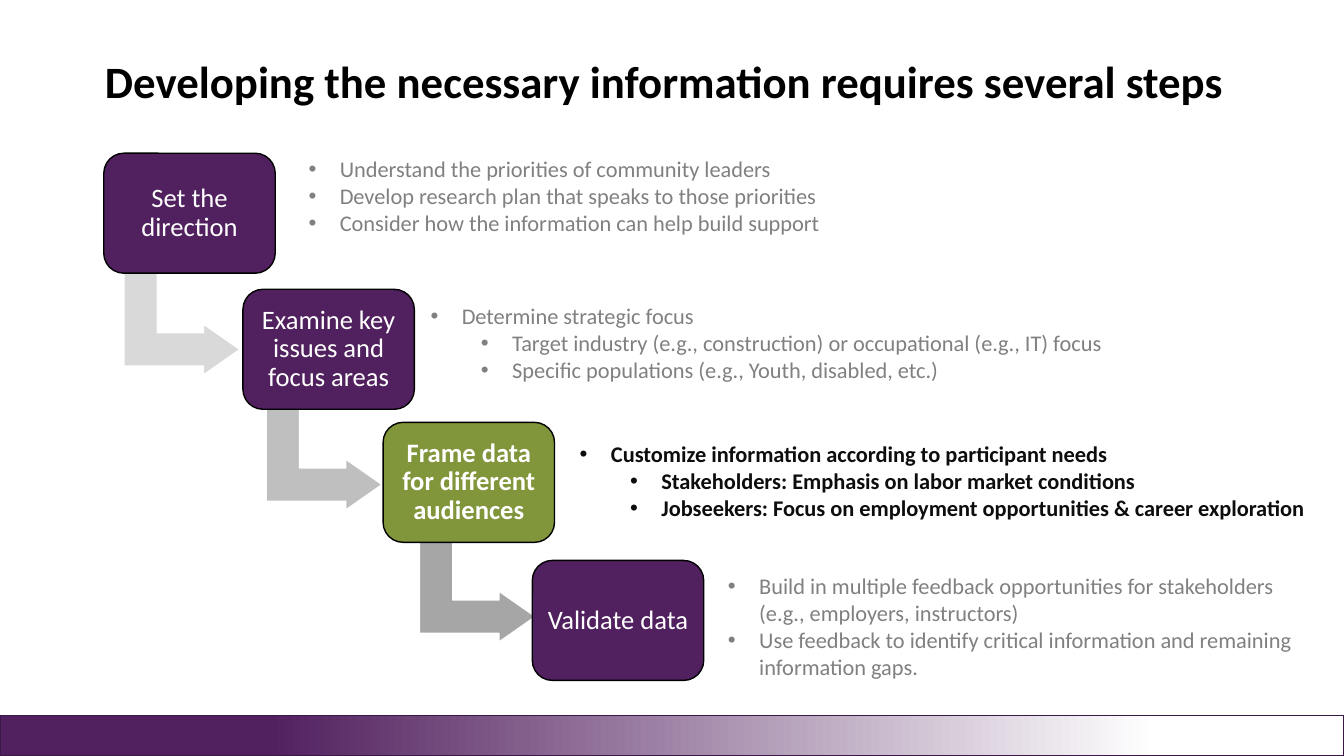
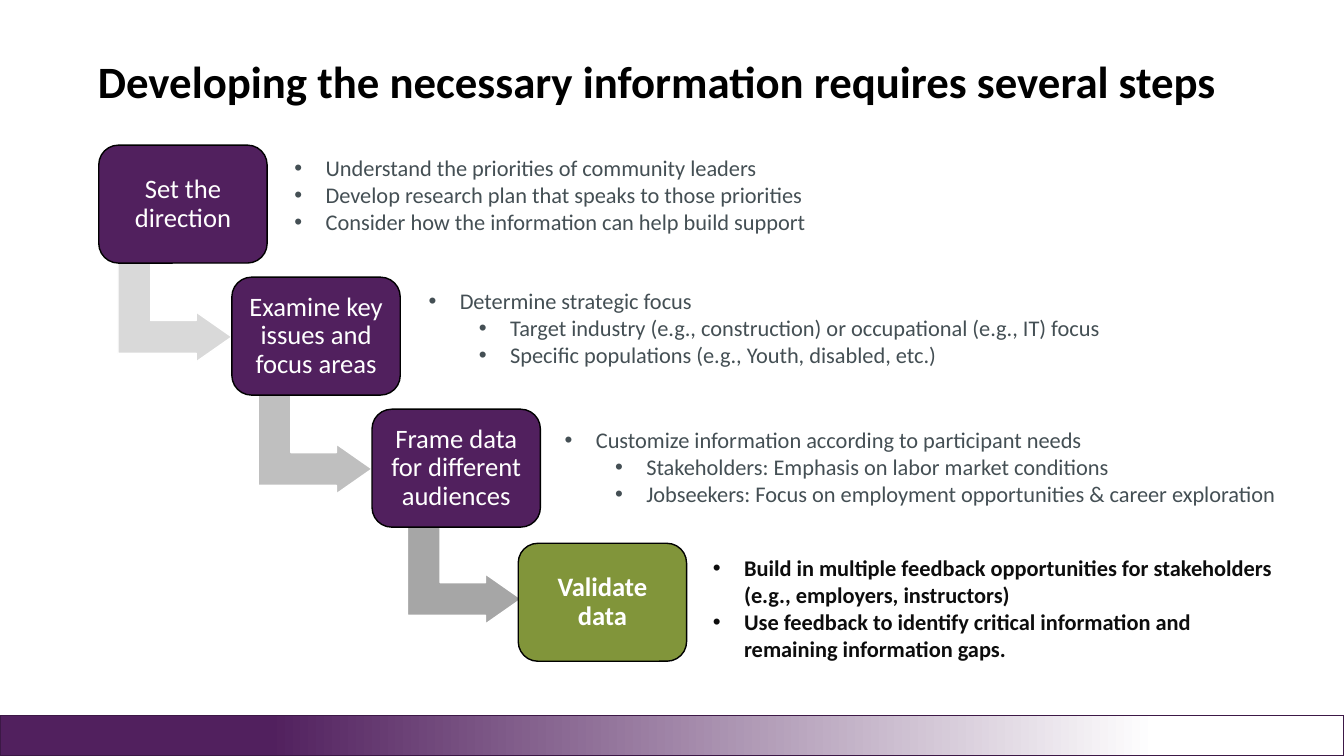
"""Build two slides that walk through the steps of developing information."""

import dataclasses

import lxml.etree
import pptx
import pptx.dml.color
import pptx.enum.shapes
import pptx.enum.text
import pptx.oxml.ns
import pptx.util

Inches = pptx.util.Inches
Pt = pptx.util.Pt
MSO_SHAPE = pptx.enum.shapes.MSO_SHAPE
PP_ALIGN = pptx.enum.text.PP_ALIGN
MSO_ANCHOR = pptx.enum.text.MSO_ANCHOR
MSO_AUTO_SIZE = pptx.enum.text.MSO_AUTO_SIZE
qn = pptx.oxml.ns.qn


@dataclasses.dataclass(frozen=True)
class Theme:
    font: str = "Calibri"
    black: str = "000000"
    white: str = "FFFFFF"
    purple: str = "51205E"
    green: str = "81953A"
    band_edge: str = "3C1846"
    active_text: str = "0D0D0D"
    arrows: tuple = ("D9D9D9", "BFBFBF", "A6A6A6")
    title_size: int = 32
    step_size: int = 19
    list_size: int = 16


HEADING = "Developing the necessary information requires several steps"

STEPS = [
    ("Set the direction", [
        (0, "Understand the priorities of community leaders"),
        (0, "Develop research plan that speaks to those priorities"),
        (0, "Consider how the information can help build support"),
    ]),
    ("Examine key issues and focus areas", [
        (0, "Determine strategic focus"),
        (1, "Target industry (e.g., construction) or occupational (e.g., IT) focus"),
        (1, "Specific populations (e.g., Youth, disabled, etc.)"),
    ]),
    ("Frame data for different audiences", [
        (0, "Customize information according to participant needs"),
        (1, "Stakeholders: Emphasis on labor market conditions"),
        (1, "Jobseekers: Focus on employment opportunities & career exploration"),
    ]),
    ("Validate data", [
        (0, "Build in multiple feedback opportunities for stakeholders "
            "(e.g., employers, instructors)"),
        (0, "Use feedback to identify critical information and remaining "
            "information gaps."),
    ]),
]

STAIRCASES = [
    {
        "active": 2,
        "quiet_text": "808080",
        "title": (0.94, 0.45, 11.85, 0.76),
        "step_size": (1.7, 1.19),
        "steps": [(1.03, 1.52), (2.41, 2.87), (3.8, 4.19), (5.28, 5.56)],
        "arrow_size": (1.01, 1.15),
        "arrows": [(1.3, 2.64), (2.71, 3.98), (4.23, 5.29)],
        "lists": [(2.96, 1.49, 6.42, 0.91), (4.17, 2.95, 8.89, 0.91),
                  (5.65, 4.32, 7.47, 0.91), (7.12, 5.63, 6, 1.18)],
    },
    {
        "active": 3,
        "quiet_text": "444F54",
        "title": (0.87, 0.38, 11.77, 0.91),
        "step_size": (1.67, 1.17),
        "steps": [(0.98, 1.44), (2.3, 2.75), (3.69, 4.06), (5.14, 5.39)],
        "arrow_size": (0.99, 1.13),
        "arrows": [(1.24, 2.53), (2.63, 3.84), (4.11, 5.13)],
        "lists": [(2.82, 1.48, 6.42, 0.91), (4.15, 2.8, 8.57, 0.91),
                  (5.5, 4.18, 7.5, 0.91), (6.97, 5.45, 5.82, 1.18)],
    },
]


def rgb(code):
    return pptx.dml.color.RGBColor.from_string(code)


class StepDeck:
    def __init__(self, theme):
        self.theme = theme
        self.deck = pptx.Presentation()
        self.deck.slide_width = Inches(13.33)
        self.deck.slide_height = Inches(7.5)
        self.slide = None

    def new_slide(self):
        four_lists_layout = self.deck.slide_layouts.get_by_name("Comparison")
        self.slide = self.deck.slides.add_slide(four_lists_layout)

    def add_words(self, paragraph, words, size, color, bold=False):
        run = paragraph.add_run()
        run.text = words
        run.font.name = self.theme.font
        run.font.size = Pt(size)
        run.font.bold = bold
        run.font.color.rgb = rgb(color)

    def place(self, holder, box):
        holder.left, holder.top, holder.width, holder.height = map(Inches, box)

    def title(self, words, box):
        heading = self.slide.shapes.title
        self.place(heading, box)
        frame = heading.text_frame
        frame.auto_size = MSO_AUTO_SIZE.NONE
        frame.vertical_anchor = MSO_ANCHOR.MIDDLE
        line = frame.paragraphs[0]
        line.alignment = PP_ALIGN.LEFT
        line.line_spacing = 0.9
        self.add_words(line, words, self.theme.title_size, self.theme.black, True)

    def outline(self, kind, box, edge):
        figure = self.slide.shapes.add_shape(kind, *map(Inches, box))
        figure.shadow.inherit = False
        figure.line.color.rgb = rgb(edge)
        figure.line.width = Pt(1)
        return figure

    def arrow(self, box, color):
        bend = self.outline(MSO_SHAPE.BENT_UP_ARROW, box, self.theme.white)
        bend.rotation = 90
        for index, amount in enumerate((0.328, 0.25, 0.358)):
            bend.adjustments[index] = amount
        bend.fill.solid()
        bend.fill.fore_color.rgb = rgb(color)

    def step(self, words, box, active):
        card = self.outline(MSO_SHAPE.ROUNDED_RECTANGLE, box, self.theme.black)
        card.fill.solid()
        card.fill.fore_color.rgb = rgb(
            self.theme.green if active else self.theme.purple)
        frame = card.text_frame
        frame.word_wrap = True
        frame.vertical_anchor = MSO_ANCHOR.MIDDLE
        frame.margin_left = frame.margin_right = Inches(0.08)
        frame.margin_top = frame.margin_bottom = Inches(0.08)
        line = frame.paragraphs[0]
        line.alignment = PP_ALIGN.CENTER
        line.line_spacing = 0.9
        self.add_words(line, words, self.theme.step_size, self.theme.white, active)

    def bullets(self, number, entries, box, color, bold):
        details = self.slide.placeholders[number]
        self.place(details, box)
        frame = details.text_frame
        frame.word_wrap = True
        frame.auto_size = MSO_AUTO_SIZE.SHAPE_TO_FIT_TEXT
        frame.vertical_anchor = MSO_ANCHOR.TOP
        for index, (level, words) in enumerate(entries):
            line = frame.add_paragraph() if index else frame.paragraphs[0]
            line.level = level
            line.alignment = PP_ALIGN.LEFT
            line.space_before = Pt(0)
            self.bullet(line, 0.31 + 0.5 * level)
            self.add_words(line, words, self.theme.list_size, color, bold)

    def bullet(self, line, indent):
        properties = line._p.get_or_add_pPr()
        properties.set("marL", str(Inches(indent)))
        properties.set("indent", str(-Inches(0.31)))
        lxml.etree.SubElement(properties, qn("a:buFont"), typeface="Arial")
        lxml.etree.SubElement(properties, qn("a:buChar"), char="•")

    def band(self):
        footer = self.outline(
            MSO_SHAPE.RECTANGLE, (0, 7.1, 13.33, 0.4), self.theme.band_edge)
        footer.fill.gradient()
        footer.fill.gradient_angle = 0
        fade = ((0.2, self.theme.purple), (0.86, self.theme.white))
        for stop, (position, color) in zip(footer.fill.gradient_stops, fade):
            stop.position = position
            stop.color.rgb = rgb(color)

    def staircase(self, layout):
        self.new_slide()
        self.title(HEADING, layout["title"])
        for index, (name, entries) in enumerate(STEPS):
            active = index == layout["active"]
            if index < len(layout["arrows"]):
                self.arrow(layout["arrows"][index] + layout["arrow_size"],
                           self.theme.arrows[index])
            self.step(name, layout["steps"][index] + layout["step_size"], active)
            color = self.theme.active_text if active else layout["quiet_text"]
            self.bullets(index + 1, entries, layout["lists"][index], color, active)
        self.band()


def main():
    steps = StepDeck(Theme())
    for layout in STAIRCASES:
        steps.staircase(layout)
    steps.deck.save("out.pptx")


if __name__ == "__main__":
    main()
